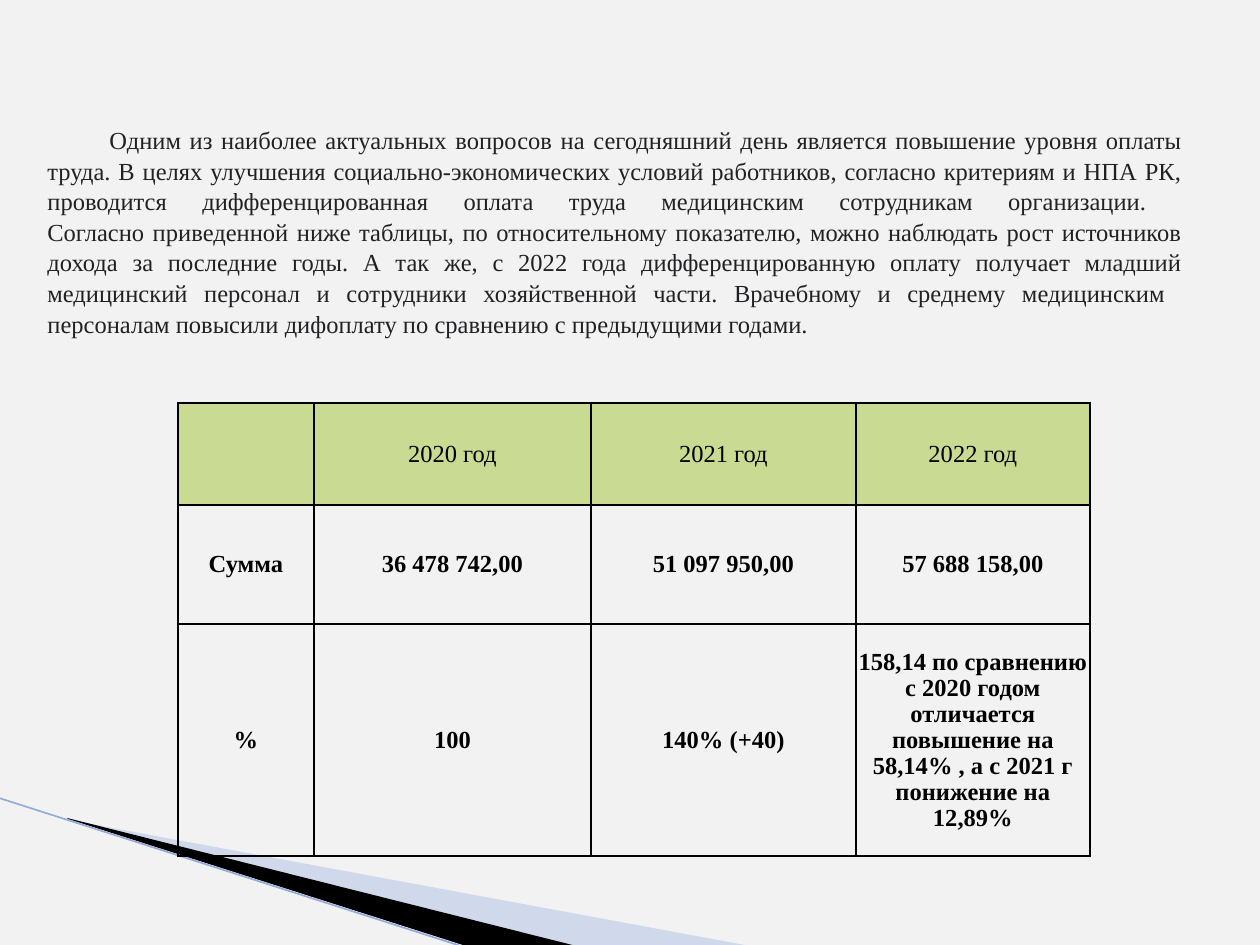
from dataclasses import dataclass

from pptx import Presentation
from pptx import util as u
from pptx.dml.color import RGBColor
from pptx.enum import shapes, text
from pptx.oxml import parse_xml
from pptx.oxml.ns import nsdecls, qn

EMU_PER_PX = u.Inches(1) / 126
FONT = "Times New Roman"
HEADER_FILL = "C9DA92"
BLACK = "000000"

INTRO = (
    "Одним из наиболее актуальных вопросов на сегодняшний день является повышение "
    "уровня оплаты труда. В целях улучшения социально-экономических условий работников, "
    "согласно критериям и НПА РК, проводится дифференцированная оплата труда медицинским "
    "сотрудникам организации. \v"
    "Согласно приведенной ниже таблицы, по относительному показателю, можно наблюдать рост "
    "источников дохода за последние годы. А так же, с 2022 года дифференцированную оплату "
    "получает младший медицинский персонал и сотрудники хозяйственной части. Врачебному и "
    "среднему медицинским  персоналам повысили дифоплату по сравнению с предыдущими годами.  "
)

ROWS = [
    ["", "2020 год", "2021 год", "2022 год"],
    ["Сумма", "36 478 742,00", "51 097 950,00", "57 688 158,00"],
    ["%", "100", "140% (+40)",
     "158,14 по сравнению с 2020 годом отличается повышение на 58,14% , "
     "а с 2021 г понижение на 12,89%"],
]
COLUMN_WIDTHS = [136, 277, 265, 234]
ROW_HEIGHTS = [102, 119, 232]


@dataclass
class Wedge:
    points: list[tuple[int, int]]
    fill: str
    alpha: int = 100


WEDGES = [
    Wedge([(69, 820), (750, 946), (575, 946), (69, 819)], "9DB2E1", 40),
    Wedge([(67, 818), (576, 946), (469, 947), (68, 819)], BLACK),
]


def px(length: int) -> u.Emu:
    return u.Emu(round(length * EMU_PER_PX))


def color(hex_string: str) -> RGBColor:
    return RGBColor.from_string(hex_string)


def set_format(target, values: dict) -> None:
    for name, value in values.items():
        setattr(target, name, value)


def format_paragraph(paragraph, layout: dict, hex_string: str, bold: bool = False) -> None:
    set_format(paragraph, layout)
    for run in paragraph.runs:
        set_format(run.font, {"name": FONT, "size": u.Pt(14), "bold": bold})
        run.font.color.rgb = color(hex_string)


def draw_wedge(slide, wedge: Wedge) -> None:
    builder = slide.shapes.build_freeform(*wedge.points[0], scale=EMU_PER_PX)
    builder.add_line_segments(wedge.points[1:], close=True)
    shape = builder.convert_to_shape()
    shape.shadow.inherit = False
    shape.line.fill.background()
    shape.fill.solid()
    shape.fill.fore_color.rgb = color(wedge.fill)
    if wedge.alpha < 100:
        fill_color = shape._element.spPr.find(qn("a:solidFill"))[0]
        fill_color.append(parse_xml(f'<a:alpha {nsdecls("a")} val="{wedge.alpha * 1000}"/>'))


def draw_edge_line(slide) -> None:
    line = slide.shapes.add_connector(
        shapes.MSO_CONNECTOR.STRAIGHT, px(-1), px(798), px(467), px(948))
    line.line.color.rgb = color("94ABDC")
    line.line.width = u.Pt(0.95)
    line._element.spPr.append(parse_xml(f'<a:effectLst {nsdecls("a")}/>'))


def draw_intro(slide) -> None:
    box = slide.shapes.add_textbox(px(35), px(121), px(1160), px(220))
    frame = box.text_frame
    set_format(frame, {"word_wrap": True, "vertical_anchor": text.MSO_ANCHOR.MIDDLE})
    paragraph = frame.paragraphs[0]
    paragraph.text = INTRO
    format_paragraph(
        paragraph, {"alignment": text.PP_ALIGN.JUSTIFY, "line_spacing": 1.04}, "202124")
    paragraph._p.get_or_add_pPr().set("indent", str(px(62)))


def add_cell_borders(cell) -> None:
    """Put 1 pt black lines on all four sides, ahead of the cell's fill."""
    properties = cell._tc.get_or_add_tcPr()
    for position, side in enumerate(("lnL", "lnR", "lnT", "lnB")):
        properties.insert(position, parse_xml(
            f'<a:{side} {nsdecls("a")} w="{u.Pt(1)}"><a:solidFill>'
            f'<a:srgbClr val="{BLACK}"/></a:solidFill></a:{side}>'))


def draw_table(slide) -> None:
    frame = slide.shapes.add_table(
        len(ROWS), len(COLUMN_WIDTHS), px(178), px(403),
        px(sum(COLUMN_WIDTHS)), px(sum(ROW_HEIGHTS)))
    table = frame.table
    set_format(table, {"first_row": False, "horz_banding": False})
    for column, width in zip(table.columns, COLUMN_WIDTHS):
        column.width = px(width)
    for row_number, (row, height) in enumerate(zip(table.rows, ROW_HEIGHTS)):
        row.height = px(height)
        is_header = row_number == 0
        for cell, words in zip(row.cells, ROWS[row_number]):
            set_format(cell, {
                "text": words, "vertical_anchor": text.MSO_ANCHOR.MIDDLE,
                "margin_left": px(1), "margin_right": px(1),
                "margin_top": px(1), "margin_bottom": 0})
            if is_header:
                cell.fill.solid()
                cell.fill.fore_color.rgb = color(HEADER_FILL)
            else:
                cell.fill.background()
            add_cell_borders(cell)
            format_paragraph(
                cell.text_frame.paragraphs[0],
                {"alignment": text.PP_ALIGN.CENTER, "line_spacing": 0.96},
                BLACK, bold=not is_header)


def main() -> None:
    presentation = Presentation()
    set_format(presentation, {"slide_width": px(1260), "slide_height": px(945)})
    slide = presentation.slides.add_slide(presentation.slide_layouts[6])
    slide.background.fill.solid()
    slide.background.fill.fore_color.rgb = color("F2F2F2")
    for wedge in WEDGES:
        draw_wedge(slide, wedge)
    draw_edge_line(slide)
    draw_intro(slide)
    draw_table(slide)
    presentation.save("out.pptx")


if __name__ == "__main__":
    main()
